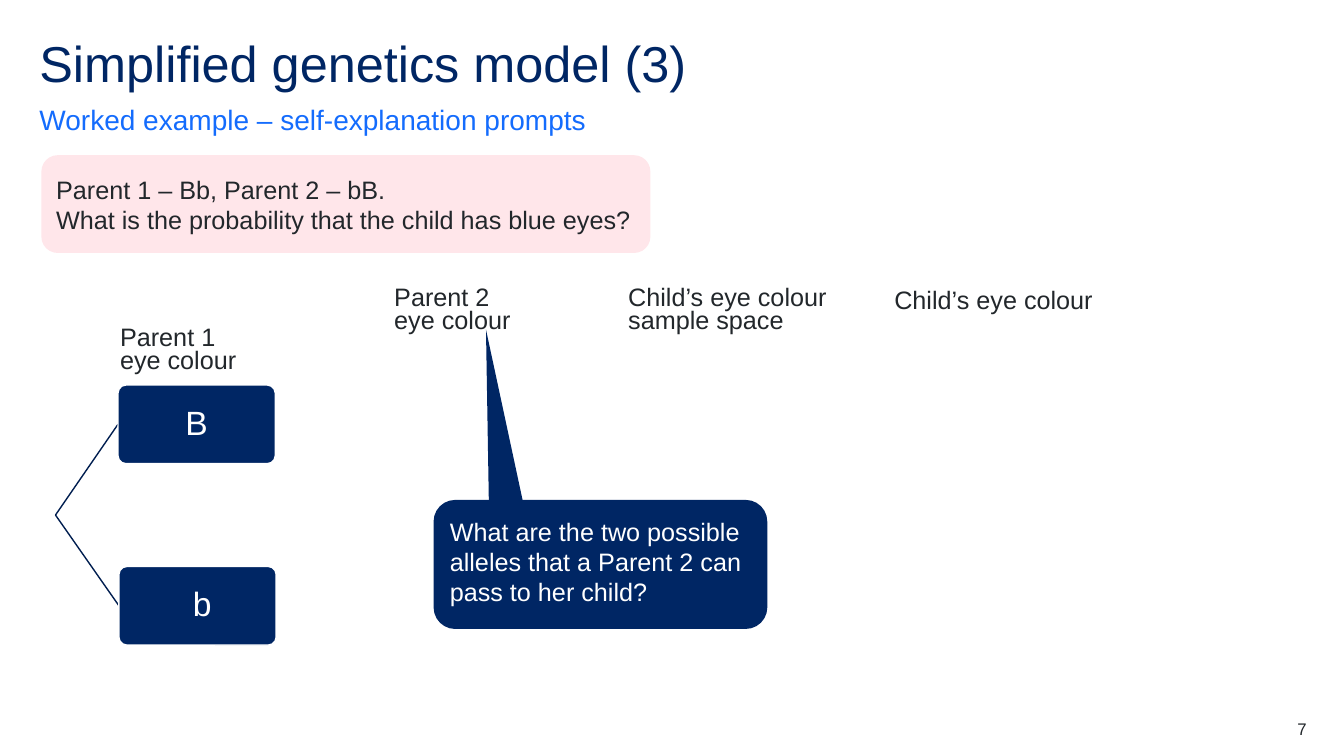
from lxml import etree
from pptx import Presentation
from pptx.dml.color import RGBColor
from pptx.enum.shapes import MSO_CONNECTOR, MSO_SHAPE
from pptx.enum.text import MSO_ANCHOR as Anchor, PP_ALIGN as Align
from pptx.oxml.ns import qn
from pptx.util import Inches, Pt

# Content: all positions and sizes are percentages of the slide
NAVY, BRIGHT_BLUE, PINK = "002664", "146CFD", "FFE6EA"
INK, WHITE, BRANCH_BLUE = "22272B", "FFFFFF", "001E50"

TITLE = "Simplified genetics model (3)"
SUBTITLE = "Worked example – self-explanation prompts"
QUESTION = ("Parent 1 – Bb, Parent 2 – bB.\n"
            "What is the probability that the child has blue eyes?")
PROMPT = ("What are the two possible alleles that a Parent 2 can "
          "pass to her child?")
PAGE_NUMBER = "7"

ALLELES = [("B", 8.78), (" b", 8.85)]  # text, left
ALLELE_TOP, ALLELE_PITCH = 50.93, 24
ALLELE_WIDTH, ALLELE_HEIGHT = 11.7, 10.4
FORK = (4.13, 68.13)

LABELS = [  # text, left, top, line spacing
    ("Parent 2\veye colour", 29.33, 38.13, 0.75),
    ("Child’s eye colour\nsample space", 46.74, 38.13, 0.75),
    ("Child’s eye colour", 66.54, 37.6, 1.0),
    ("Parent 1\veye colour", 8.93, 43.47, 0.75),
]
LABEL_SIZE = (16.13, 10.27)
POINTER = [(39.01, 67.2), (36.16, 43.6), (36.38, 67.07)]

presentation = Presentation()
presentation.slide_width = Inches(13.33)
presentation.slide_height = Inches(7.5)
slide = presentation.slides.add_slide(presentation.slide_layouts[6])


def across(percent):
    return round(presentation.slide_width * percent / 100)


def down(percent):
    return round(presentation.slide_height * percent / 100)


def place(left, top, width, height):
    return across(left), down(top), across(width), down(height)


def color(hex_text):
    return RGBColor.from_string(hex_text)


def write(shape, text, size, hex_text, margin=0.0, anchor=Anchor.TOP,
          align=Align.LEFT, spacing=1.0, after=0):
    frame = shape.text_frame
    frame.word_wrap = True
    frame.vertical_anchor = anchor
    frame.margin_left = frame.margin_right = Inches(margin)
    frame.margin_top = frame.margin_bottom = Inches(margin)
    frame.text = text
    for paragraph in frame.paragraphs:
        paragraph.alignment = align
        paragraph.line_spacing = spacing
        paragraph.space_after = Pt(after)
        paragraph.font.name = "Arial"
        paragraph.font.size = Pt(size)
        paragraph.font.color.rgb = color(hex_text)


def add_text(box, text, size, hex_text, **options):
    write(slide.shapes.add_textbox(*place(*box)), text, size, hex_text,
          **options)


def paint(shape, fill):
    shape.shadow.inherit = False
    shape.fill.solid()
    shape.fill.fore_color.rgb = color(fill)
    shape.line.fill.background()


def add_card(box, fill, radius=0.1667):
    card = slide.shapes.add_shape(MSO_SHAPE.ROUNDED_RECTANGLE, *place(*box))
    card.adjustments[0] = radius
    paint(card, fill)
    return card


# Heading and question
add_text((2.93, 5.2, 94.22, 8), TITLE, 36, NAVY, spacing=0.9)
add_text((2.93, 13.47, 94.22, 4.53), SUBTITLE, 20, BRIGHT_BLUE,
         anchor=Anchor.BOTTOM, spacing=1.5, after=12)
write(add_card((3.08, 20.53, 45.31, 12.93), PINK), QUESTION, 18, INK,
      margin=0.1, anchor=Anchor.MIDDLE)

# Tree: one branch and one box for each allele of Parent 1
for row, (allele, left) in enumerate(ALLELES):
    top = ALLELE_TOP + row * ALLELE_PITCH
    branch = slide.shapes.add_connector(
        MSO_CONNECTOR.STRAIGHT, across(FORK[0]), down(FORK[1]),
        across(left), down(top + ALLELE_HEIGHT / 2))
    branch.line.color.rgb = color(BRANCH_BLUE)
    branch.line.width = Pt(1)
    etree.SubElement(branch.element.spPr, qn("a:effectLst"))

    box = add_card((left, top, ALLELE_WIDTH, ALLELE_HEIGHT), NAVY, 0.1)
    box.line.color.rgb = color(WHITE)
    box.line.width = Pt(1)
    write(box, allele, 24, WHITE, margin=0.05, anchor=Anchor.MIDDLE,
          align=Align.CENTER, spacing=0.9)

# Column labels
for text, left, top, spacing in LABELS:
    add_text((left, top, *LABEL_SIZE), text, 18, INK, spacing=spacing)

# Prompt with its pointer
write(add_card((32.26, 66.13, 24.83, 17.07), NAVY), PROMPT, 18, WHITE,
      margin=0.1)
start, *corners = [(across(x), down(y)) for x, y in POINTER]
outline = slide.shapes.build_freeform(*start)
outline.add_line_segments(corners, close=True)
paint(outline.convert_to_shape(), NAVY)

# Page number
add_text((91.3, 95.07, 5.93, 2.67), PAGE_NUMBER, 12, INK, align=Align.RIGHT)

presentation.save("out.pptx")
